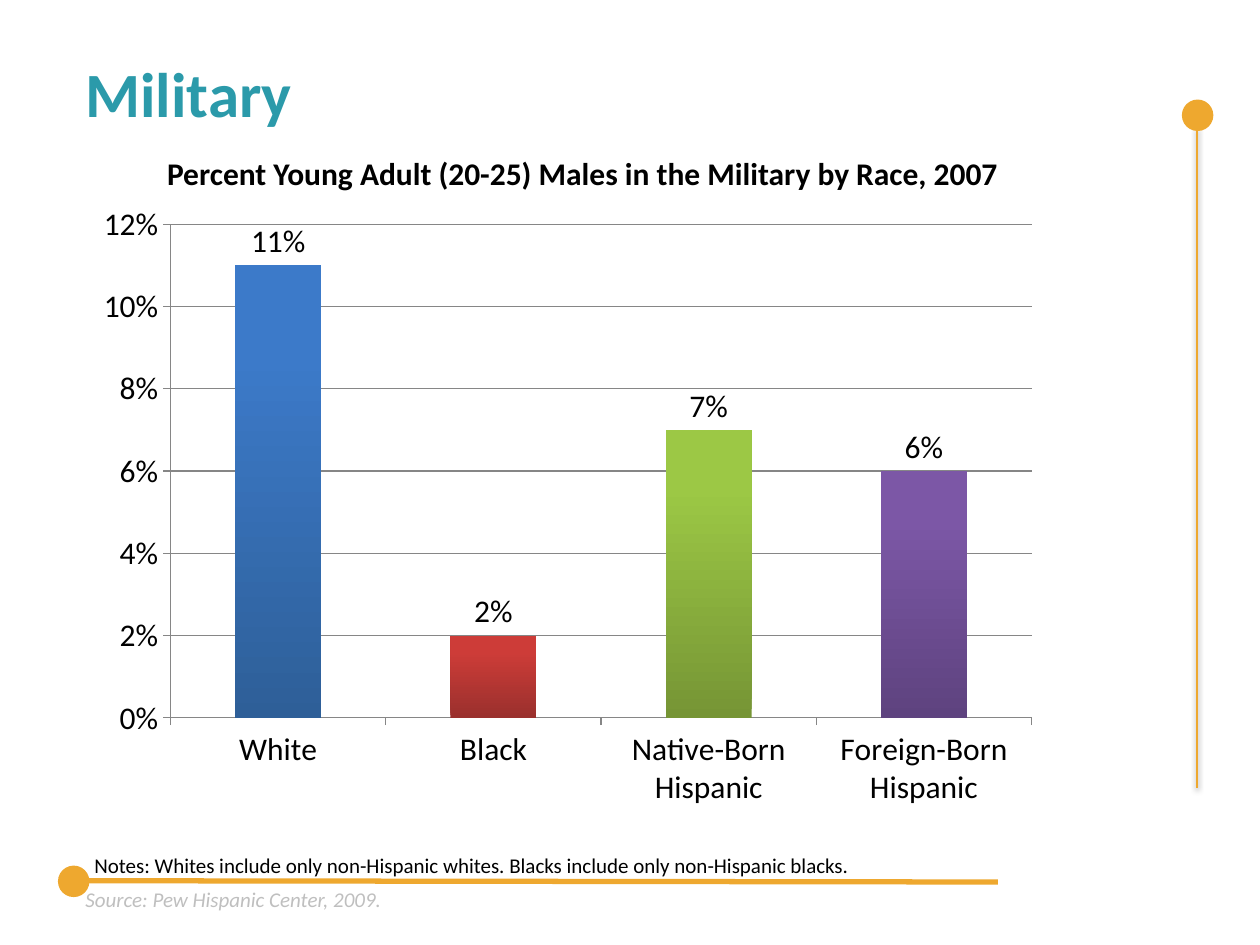
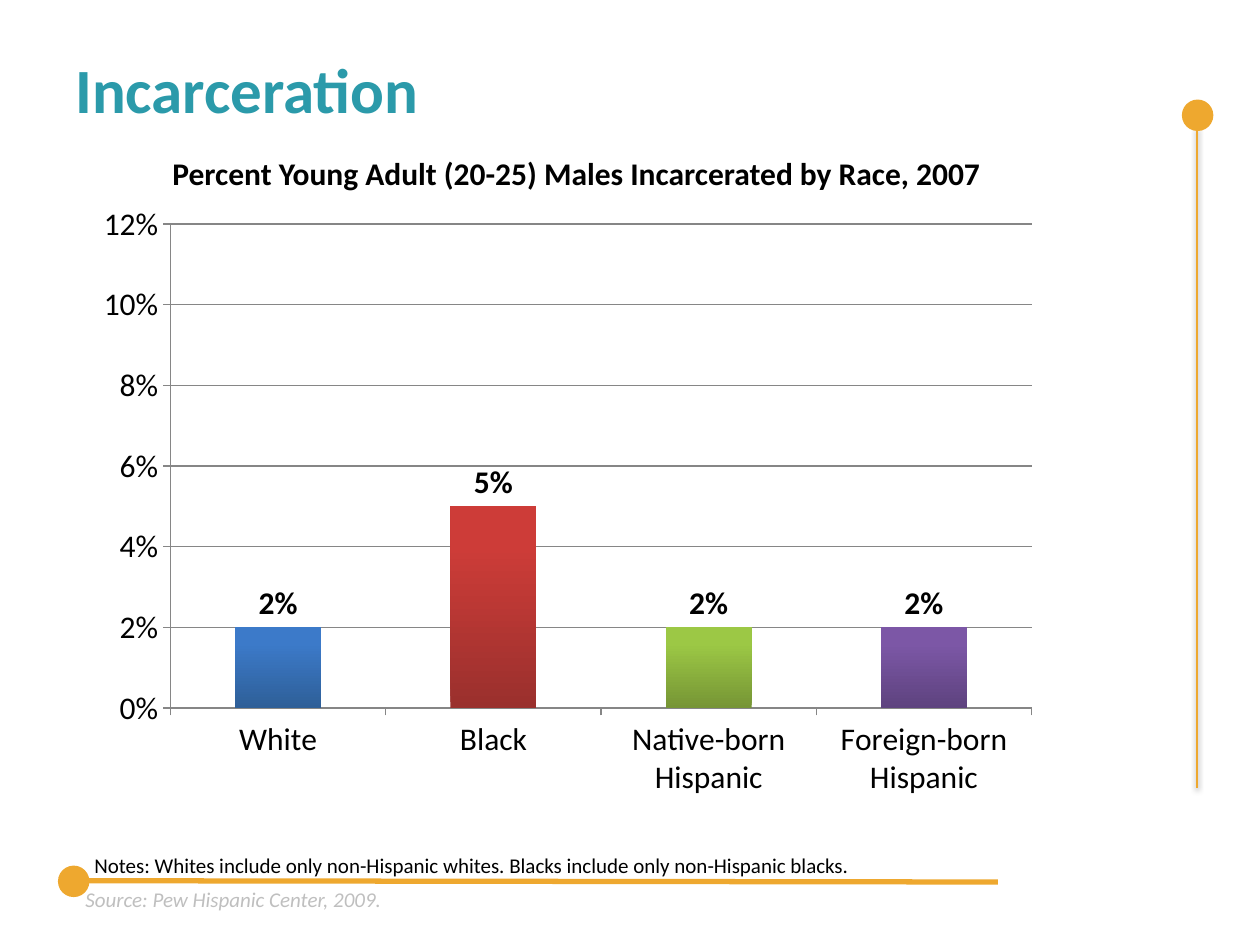
from dataclasses import dataclass

from lxml import etree
from pptx import Presentation
from pptx.chart.data import CategoryChartData
from pptx.dml.color import RGBColor
from pptx.enum import chart as ch, shapes, text
from pptx.oxml.ns import qn
from pptx.util import Inches, Pt

FONT = "Calibri"
TEAL, GOLD, BLACK, SILVER, GRID = "2B9AAA", "EEA82F", "000000", "BFBFBF", "868686"
# Bottom and top colour of each bar
BAR_COLOURS = [("2E5F98", "3C7AC9"), ("9A302D", "CD3C38"),
               ("769535", "9CC845"), ("5E437F", "7C57A6")]
NOTES = ("Notes: Whites include only non-Hispanic whites. "
         "Blacks include only non-Hispanic blacks.")
SOURCE = "Source: Pew Hispanic Center, 2009."


@dataclass
class Box:
    left: float
    top: float
    width: float
    height: float

    def inches(self) -> list:
        return [Inches(v) for v in (self.left, self.top, self.width, self.height)]


@dataclass
class Rule:
    start: tuple[float, float]
    end: tuple[float, float]
    weight: float
    dot: tuple[float, float]
    shadowed: bool


@dataclass
class Topic:
    title: str
    title_box: Box
    heading: str
    heading_box: Box
    heading_align: text.PP_ALIGN
    chart_box: Box
    groups: list[str]
    shares: list[float]
    bold_labels: bool


RULES = [
    Rule((9.5, 6.25), (9.5, 1.01), 1.5, (9.38, 0.79), True),
    Rule((0.67, 6.99), (7.92, 7), 3, (0.46, 6.87), False),
]
TOPICS = [
    Topic("Military", Box(0.58, 0.3, 9, 0.87),
          "Percent Young Adult (20-25) Males in the Military by Race, 2007",
          Box(1, 1.17, 7.25, 0.42), text.PP_ALIGN.CENTER, Box(0.67, 1.53, 7.67, 4.97),
          ["White", "Black", "Native-Born Hispanic", "Foreign-Born Hispanic"],
          [0.11, 0.02, 0.07, 0.06], False),
    Topic("Incarceration", Box(0.5, 0.23, 9, 0.94),
          "Percent Young Adult (20-25) Males Incarcerated by Race, 2007",
          Box(1.27, 1.17, 7.54, 0.4), text.PP_ALIGN.LEFT, Box(0.67, 1.53, 7.67, 4.89),
          ["White", "Black", "Native-born Hispanic", "Foreign-born Hispanic"],
          [0.02, 0.05, 0.02, 0.02], True),
]


def colour(value: str) -> RGBColor:
    return RGBColor.from_string(value)


def style_font(font, size: float, value: str, bold: bool = False, italic: bool = False) -> None:
    font.name, font.size, font.bold, font.italic = FONT, Pt(size), bold, italic
    font.color.rgb = colour(value)


def add_text(slide, box: Box, words: str, size: float, value: str, bold: bool = False,
             italic: bool = False, align=text.PP_ALIGN.LEFT,
             anchor=text.MSO_ANCHOR.TOP) -> None:
    frame = slide.shapes.add_textbox(*box.inches()).text_frame
    frame.word_wrap = True
    frame.vertical_anchor = anchor
    paragraph = frame.paragraphs[0]
    paragraph.text = words
    paragraph.alignment = align
    style_font(paragraph.font, size, value, bold, italic)


def add_rule(slide, rule: Rule) -> None:
    """Gold line that ends in a round dot."""
    ends = [Inches(v) for v in (*rule.start, *rule.end)]
    line = slide.shapes.add_connector(shapes.MSO_CONNECTOR.STRAIGHT, *ends)
    line.line.color.rgb = colour(GOLD)
    line.line.width = Pt(rule.weight)
    effects = etree.SubElement(line._element.spPr, qn("a:effectLst"))
    if rule.shadowed:
        shadow = etree.SubElement(effects, qn("a:outerShdw"), blurRad=str(Pt(3.1)),
                                  dist=str(Pt(1.6)), dir="5400000", rotWithShape="0")
        tint = etree.SubElement(shadow, qn("a:srgbClr"), val=BLACK)
        etree.SubElement(tint, qn("a:alpha"), val="38000")

    dot = slide.shapes.add_shape(shapes.MSO_SHAPE.OVAL, *Box(*rule.dot, 0.25, 0.25).inches())
    dot.rotation = 330
    dot.shadow.inherit = False
    dot.fill.solid()
    dot.fill.fore_color.rgb = colour(GOLD)
    dot.line.fill.background()


def add_share_chart(slide, topic: Topic) -> None:
    data = CategoryChartData(number_format="0%")
    data.categories = topic.groups
    data.add_series("Series 1", topic.shares)
    chart = slide.shapes.add_chart(ch.XL_CHART_TYPE.COLUMN_CLUSTERED,
                                   *topic.chart_box.inches(), data).chart
    chart.has_legend = chart.has_title = False
    style_font(chart.font, 18, BLACK)

    # Axes
    shares_axis = chart.value_axis
    shares_axis.minimum_scale, shares_axis.maximum_scale = 0, 0.12
    shares_axis.major_unit = 0.02
    shares_axis.tick_labels.number_format = "0%"
    shares_axis.tick_labels.number_format_is_linked = False
    shares_axis.has_major_gridlines = True
    shares_axis.major_gridlines.format.line.color.rgb = colour(GRID)
    for axis in (shares_axis, chart.category_axis):
        axis.major_tick_mark = ch.XL_TICK_MARK.OUTSIDE
        axis.format.line.color.rgb = colour(GRID)

    # Bars and their labels
    plot = chart.plots[0]
    plot.gap_width = 150
    plot.vary_by_categories = False
    for index, shades in enumerate(BAR_COLOURS):
        fill = plot.series[0].points[index].format.fill
        fill.gradient()
        fill.gradient_angle = 90
        for stop, shade, position in zip(fill.gradient_stops, shades, (0, 0.8)):
            stop.color.rgb = colour(shade)
            stop.position = position
    plot.has_data_labels = True
    labels = plot.data_labels
    labels.show_value = True
    labels.number_format, labels.number_format_is_linked = "0%", False
    labels.position = ch.XL_LABEL_POSITION.OUTSIDE_END
    style_font(labels.font, 18, BLACK, topic.bold_labels)


def add_topic(deck, topic: Topic) -> None:
    slide = deck.slides.add_slide(deck.slide_layouts[6])
    for rule in RULES:
        add_rule(slide, rule)
    add_text(slide, topic.title_box, topic.title, 36, TEAL, bold=True,
             anchor=text.MSO_ANCHOR.MIDDLE)
    add_text(slide, Box(0.65, 6.72, 7.74, 0.3), NOTES, 12, BLACK)
    add_text(slide, Box(0.58, 6.99, 6.34, 0.3), SOURCE, 12, SILVER, italic=True)
    add_text(slide, topic.heading_box, topic.heading, 18, BLACK, bold=True,
             align=topic.heading_align)
    add_share_chart(slide, topic)


def main() -> None:
    deck = Presentation()
    deck.slide_width, deck.slide_height = Inches(10), Inches(7.5)
    for topic in TOPICS:
        add_topic(deck, topic)
    deck.save("out.pptx")


if __name__ == "__main__":
    main()
